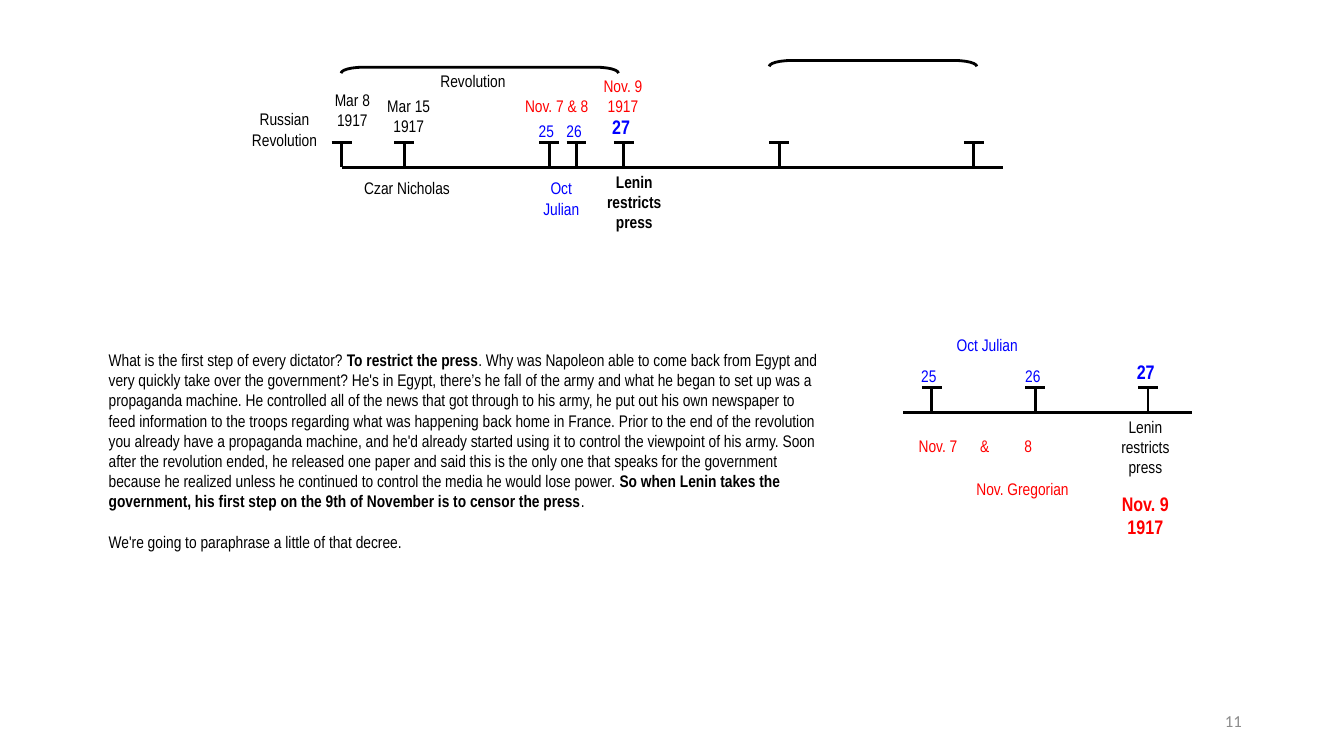
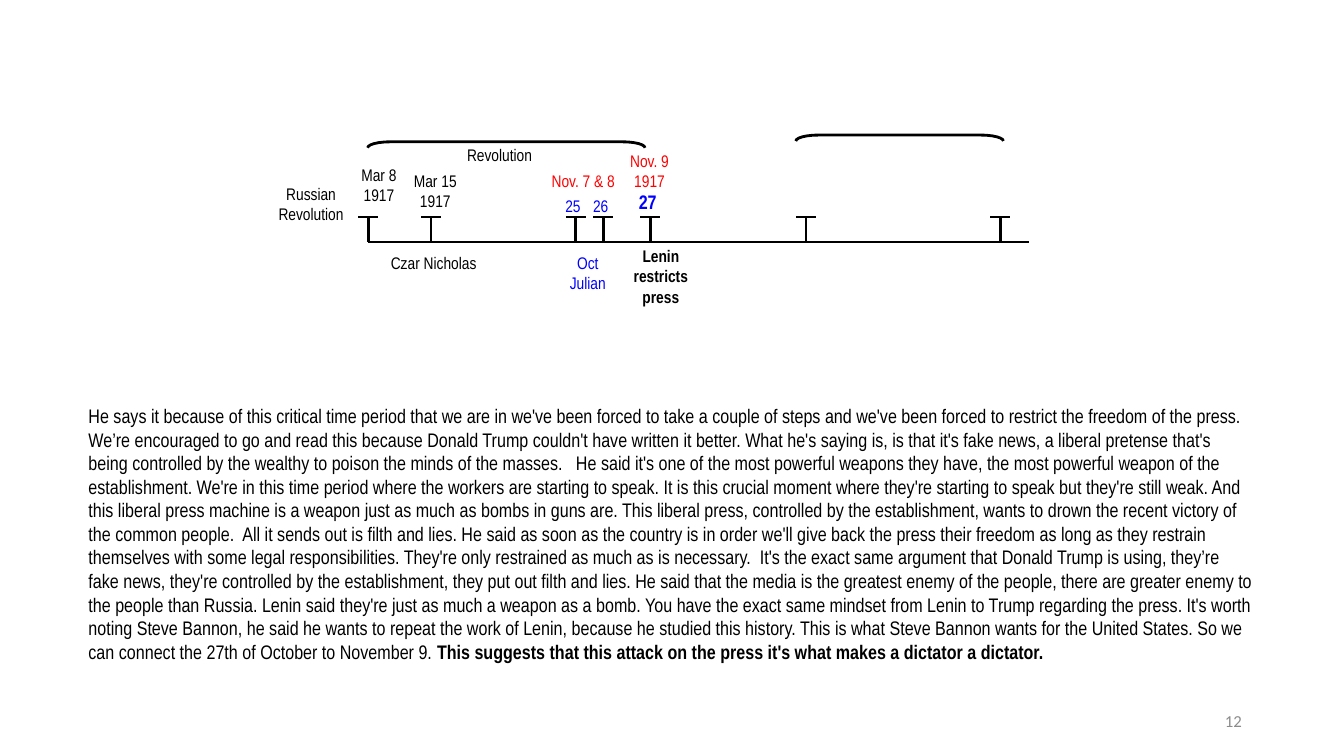
"""Two slides on the press and the 1917 revolution, each with a timeline."""
from lxml import etree
from pptx import Presentation
from pptx.dml.color import RGBColor
from pptx.enum import shapes, text
from pptx.oxml import ns
from pptx.util import Cm, Pt

COLOURS = {"ink": "000000", "julian": "0000FF", "gregorian": "FF0000", "number": "8C8C8C"}
FONT = "Arial Narrow"
NUMBER_FONT = "Calibri"
LINE_WIDTH = 2
TICK_HEIGHT, CAP_WIDTH = 0.63, 0.5
BRACKET_DEPTH, BRACKET_CURVE = 0.15, 0.56
LABEL_FRAME = {"margin_left": Cm(0.1), "margin_right": Cm(0.1),
               "margin_top": Cm(0.1), "margin_bottom": Cm(0.1)}
CENTRE, RIGHT, LEFT = text.PP_ALIGN.CENTER, text.PP_ALIGN.RIGHT, text.PP_ALIGN.LEFT

TIMELINE = {
    "length": 16.66,
    "ticks": [0, 1.58, 5.23, 5.92, 7.11, 11.03, 15.93],
    "brackets": [(3.48, -2.45, 6.99), (13.39, -2.62, 5.23)],
    "labels": [
        ((-2.39, -1.57, 1.9, 1.9), ["Russian", "Revolution"], "ink", 12, False),
        ((-0.48, -2.06, 1.5, 1.25), ["Mar 8", "1917"], "ink", 12, False),
        ((0.94, -1.9, 1.5, 1.25), ["Mar 15", "1917"], "ink", 12, False),
        ((1.89, -2.54, 2.84, 0.6), ["Revolution"], "ink", 12, False),
        ((0.3, 0.17, 2.7, 1.27), ["Czar Nicholas"], "ink", 12, False),
        ((4.42, -1.9, 2, 0.66), ["Nov. 7 & 8"], "gregorian", 12, False),
        ((4.84, -1.27, 0.64, 0.6), ["25"], "julian", 12, False),
        ((5.54, -1.27, 0.64, 0.6), ["26"], "julian", 12, False),
        ((4.75, 0.17, 1.57, 1.27), ["Oct", "Julian"], "julian", 12, False),
        ((6.35, -2.41, 1.48, 0.64), ["Nov. 9", "1917"], "gregorian", 12, False),
        ((6.65, -1.42, 0.79, 0.79), ["27"], "julian", 14, True),
        ((6.5, 0, 1.75, 1.75), ["Lenin restricts press"], "ink", 12, True),
    ],
}
CLOSE_UP = {
    "length": 7.29,
    "ticks": [0.72, 3.33, 6.17],
    "brackets": [],
    "labels": [
        ((-0.18, -2.06, 4.6, 0.64), ["Oct Julian"], "julian", 12, False),
        ((0.33, -1.27, 0.64, 0.6), ["25"], "julian", 12, False),
        ((2.95, -1.27, 0.64, 0.6), ["26"], "julian", 12, False),
        ((5.72, -1.42, 0.79, 0.79), ["27"], "julian", 14, True),
        ((0.18, 0.48, 1.4, 0.66), ["Nov. 7"], "gregorian", 12, False),
        ((1.74, 0.48, 0.64, 0.66), ["&"], "gregorian", 12, False),
        ((2.83, 0.48, 0.64, 0.66), ["8"], "gregorian", 12, False),
        ((1.42, 1.57, 3.18, 0.79), ["Nov. Gregorian"], "gregorian", 12, False),
        ((5.23, 0, 1.75, 1.75), ["Lenin restricts press"], "ink", 12, False),
        ((5.23, 1.9, 1.75, 0.79), ["Nov. 9", "1917"], "gregorian", 14, True),
    ],
}
DICTATOR = [
    [("What is the first step of every dictator? ", False),
     ("To restrict the press", True),
     (". Why was Napoleon able to come back from Egypt and very quickly take over the "
      "government? He's in Egypt, there’s he fall of the army and what he began to set up was "
      "a propaganda machine. He controlled all of the news that got through to his army, he put "
      "out his own newspaper to feed information to the troops regarding what was happening back "
      "home in France. ", False),
     ("Prior to the end of the revolution you already have a propaganda machine, "
      "and he'd already started using it to control the viewpoint of his army. Soon after the "
      "revolution ended, he released one paper and said this is the only one that speaks for the "
      "government because he realized unless he continued to control the media he would lose "
      "power. ", False),
     ("So when Lenin takes the government, his first step on the 9th of November is to censor "
      "the press", True),
     (".", False)],
    [("We're going to paraphrase a little of that decree.", False)],
]
DECREE = [
    [("He says it because of this critical time period that we are in we've been forced to take "
      "a couple of steps and we've been forced to restrict the freedom of the press. We’re "
      "encouraged to go and read this because Donald Trump couldn't have written it better. What "
      "he's saying is, is that it's fake news, a liberal pretense that's being controlled by the "
      "wealthy to poison the minds of the masses.   ", False),
     ("He said it's one of the most powerful "
      "weapons they have, the most powerful weapon of the establishment. We're in this time "
      "period where the workers are starting to speak. It is this crucial moment where they're "
      "starting to speak but they're still weak. And this liberal press machine is a weapon just "
      "as much as bombs in guns are. ", False),
     ("This liberal press, controlled by the establishment, wants "
      "to drown the recent victory of the common people.  All it sends out is filth and lies. He "
      "said as soon as the country is in order we'll give back the press their freedom as long "
      "as they restrain themselves with some legal responsibilities. They're only restrained as "
      "much as is necessary.  ", False),
     ("It's the exact same argument that Donald Trump is using, they’re "
      "fake news, they're controlled by the establishment, they put out filth and lies. He said "
      "that the media is the greatest enemy of the people, there are greater enemy to the people "
      "than Russia. Lenin said they're just as much a weapon as a bomb. ", False),
     ("You have the exact same "
      "mindset from Lenin to Trump regarding the press. It's worth noting Steve Bannon, he said "
      "he wants to repeat the work of Lenin, because he studied this history. This is what Steve "
      "Bannon wants for the United States. So we can connect the 27th of October to November 9. ",
      False),
     ("This suggests that this attack on the press it's what makes a dictator a dictator.", True)],
]


def colour(name):
    """Return the named colour."""
    return RGBColor.from_string(COLOURS[name])


def add_text(page, place, paragraphs, ink="ink", size=12, align=LEFT, font=FONT, gap=0, frame=None):
    """Add a text box; each paragraph is a list of (words, bold) pairs."""
    box = page.shapes.add_textbox(*map(Cm, place))
    for key, value in {"word_wrap": True, **(frame or {})}.items():
        setattr(box.text_frame, key, value)
    for index, spans in enumerate(paragraphs):
        para = box.text_frame.add_paragraph() if index else box.text_frame.paragraphs[0]
        para.alignment = align
        para.space_before = Pt(gap if index else 0)
        for words, bold in spans:
            span = para.add_run()
            span.text = words
            for key, value in {"name": font, "size": Pt(size), "bold": bold}.items():
                setattr(span.font, key, value)
            span.font.color.rgb = colour(ink)


def draw_line(line):
    """Give a line the shared stroke."""
    line.color.rgb = colour("ink")
    line.width = Pt(LINE_WIDTH)


def add_line(page, *ends):
    """Add a straight line between two points."""
    line = page.shapes.add_connector(shapes.MSO_CONNECTOR.STRAIGHT, *map(Cm, ends))
    draw_line(line.line)
    etree.SubElement(line.element.spPr, ns.qn("a:effectLst"))


def add_bracket(page, centre, middle, span):
    """Add a bracket, open at the bottom, around its centre point."""
    place = (centre - BRACKET_DEPTH / 2, middle - span / 2, BRACKET_DEPTH, span)
    bracket = page.shapes.add_shape(shapes.MSO_SHAPE.LEFT_BRACKET, *map(Cm, place))
    bracket.rotation = 90
    bracket.adjustments[0] = BRACKET_CURVE / BRACKET_DEPTH
    bracket.shadow.inherit = False
    bracket.fill.background()
    draw_line(bracket.line)


def add_timeline(page, left, axis, parts):
    """Place a timeline relative to the start of its axis."""
    add_line(page, left, axis, left + parts["length"], axis)
    for offset in parts["ticks"]:
        across, top = left + offset, axis - TICK_HEIGHT
        add_line(page, across, top, across, axis)
        add_line(page, across - CAP_WIDTH / 2, top, across + CAP_WIDTH / 2, top)
    for across, down, span in parts["brackets"]:
        add_bracket(page, left + across, axis + down, span)
    for (across, down, width, height), rows, ink, size, bold in parts["labels"]:
        add_text(page, (left + across, axis + down, width, height),
                 [[(row, bold)] for row in rows], ink, size, CENTRE, frame=LABEL_FRAME)


def add_page(deck, number):
    """Add a blank page with its number."""
    page = deck.slides.add_slide(deck.slide_layouts[6])
    add_text(page, (23.93, 17.65, 7.62, 1.02), [[(str(number), False)]], "number", 12, RIGHT,
             NUMBER_FONT, frame={"vertical_anchor": text.MSO_ANCHOR.MIDDLE})
    return page


def main():
    """Build and save the deck."""
    deck = Presentation()
    deck.slide_width, deck.slide_height = Cm(33.87), Cm(19.05)

    page = add_page(deck, 11)
    add_timeline(page, 8.61, 4.22, TIMELINE)
    add_text(page, (2.49, 8.69, 18.54, 6.15), DICTATOR, gap=14.4)
    add_timeline(page, 22.76, 10.39, CLOSE_UP)

    page = add_page(deck, 12)
    add_text(page, (1.98, 10.06, 29.92, 7.62), DECREE, size=14)
    add_timeline(page, 9.28, 6.1, TIMELINE)

    deck.save("out.pptx")


if __name__ == "__main__":
    main()
